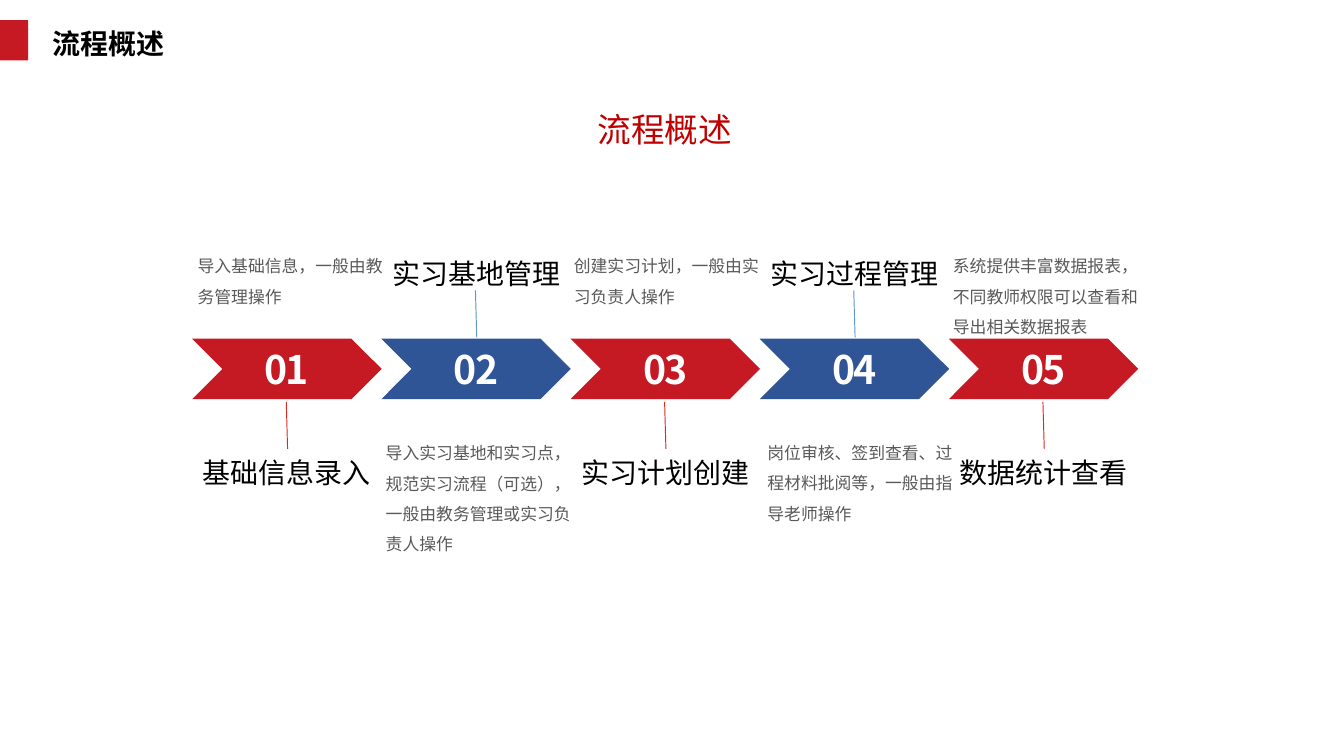
from lxml import etree
from pptx import Presentation
from pptx.dml.color import RGBColor
from pptx.enum import shapes, text
from pptx.oxml import ns
from pptx.util import Inches, Pt

# Content: heading, note and whether the heading sits above the arrow
TITLE = "流程概述"
STEPS = [
    ("基础信息录入", "导入基础信息，一般由教务管理操作", False),
    ("实习基地管理", "导入实习基地和实习点，规范实习流程（可选），一般由教务管理或实习负责人操作", True),
    ("实习计划创建", "创建实习计划，一般由实习负责人操作", False),
    ("实习过程管理", "岗位审核、签到查看、过程材料批阅等，一般由指导老师操作", True),
    ("数据统计查看", "系统提供丰富数据报表，不同教师权限可以查看和导出相关数据报表", False),
]

# Style and grid
FONT = "Noto Sans CJK SC"
RED, BLUE = "C51A24", "2F5597"
LEFT, LAST, TOP = 1.43, 7.06, 2.52
STEP = (LAST - LEFT) / (len(STEPS) - 1)
HEAD_TOP = {False: 3.35, True: 1.87}
NOTE_TOP = {False: 1.79, True: 3.18}
# Left, width and height of each note
NOTES = [(1.42, 1.55, 0.53), (2.82, 1.59, 0.98), (4.22, 1.56, 0.53),
         (5.66, 1.52, 0.76), (7.04, 1.58, 0.76)]


def color(code):
    return RGBColor.from_string(code)


def write(box, words, size, code, bold=False, align=text.PP_ALIGN.LEFT,
          pad=(0.05, 0.04), gap=1.0, space=None):
    frame = box.text_frame
    frame.word_wrap = True
    frame.auto_size = text.MSO_AUTO_SIZE.SHAPE_TO_FIT_TEXT
    frame.vertical_anchor = text.MSO_ANCHOR.TOP
    frame.margin_left = frame.margin_right = Inches(pad[0])
    frame.margin_top = frame.margin_bottom = Inches(pad[1])
    frame.text = words
    para = frame.paragraphs[0]
    para.alignment, para.line_spacing = align, gap
    para.space_before = Pt(0)
    font = para.font
    font.name, font.size, font.bold = FONT, Pt(size), bold
    font.color.rgb = color(code)
    # East Asian typeface and letter spacing
    props = para._p.pPr.find(ns.qn("a:defRPr"))
    etree.SubElement(props, ns.qn("a:ea")).set("typeface", FONT)
    if space is not None:
        props.set("spc", str(space))


def label(x, y, w, h, words, size, code, **style):
    box = slide.shapes.add_textbox(*map(Inches, (x, y, w, h)))
    write(box, words, size, code, **style)


def block(kind, x, y, w, h, code):
    form = slide.shapes.add_shape(kind, *map(Inches, (x, y, w, h)))
    form.shadow.inherit = False
    form.fill.solid()
    form.fill.fore_color.rgb = color(code)
    form.line.fill.background()


def link(x, y, h, code):
    line = slide.shapes.add_connector(
        shapes.MSO_CONNECTOR.STRAIGHT, *map(Inches, (x, y, x + 0.01, y + h)))
    line.line.color.rgb = color(code)
    line.line.width = Pt(0.5)
    etree.SubElement(line._element.spPr, ns.qn("a:effectLst"))


# Widescreen page, 16 to 9
deck = Presentation()
deck.slide_width = Inches(10)
deck.slide_height = deck.slide_width * 9 // 16
slide = deck.slides.add_slide(deck.slide_layouts[5])
mid = text.PP_ALIGN.CENTER

# Page title, its marker and the centred heading
title = slide.shapes.title
title.left, title.top, title.width, title.height = map(
    Inches, (0.34, 0.15, 2.93, 0.35))
write(title, TITLE, 15, "000000", bold=True, pad=(0.05, 0.05))
block(shapes.MSO_SHAPE.RECTANGLE, 0, 0.15, 0.21, 0.3, RED)
label(3.04, 0.77, 3.81, 0.38, TITLE, 18, "C00000", align=mid)

# Arrows with number, heading, note and link
for i, (head, note, above) in enumerate(STEPS):
    x = LEFT + i * STEP
    left, wide, high = NOTES[i]
    block(shapes.MSO_SHAPE.CHEVRON, x, TOP, 1.41, 0.45, BLUE if above else RED)
    label(x + 0.53, TOP + 0.05, 0.35, 0.35, f"{i + 1:02}", 21, "FFFFFF",
          bold=True, align=mid, pad=(0, 0), space=-110)
    label(x - 0.04, HEAD_TOP[above], 1.49, 0.33, head, 15, "000000", align=mid)
    label(left, NOTE_TOP[above], wide, high, note, 9, "595959", gap=1.5)
    link(x + 0.7, 2.16 if above else 2.99, 0.35, "6095C9" if above else "D92C21")

deck.save("out.pptx")
